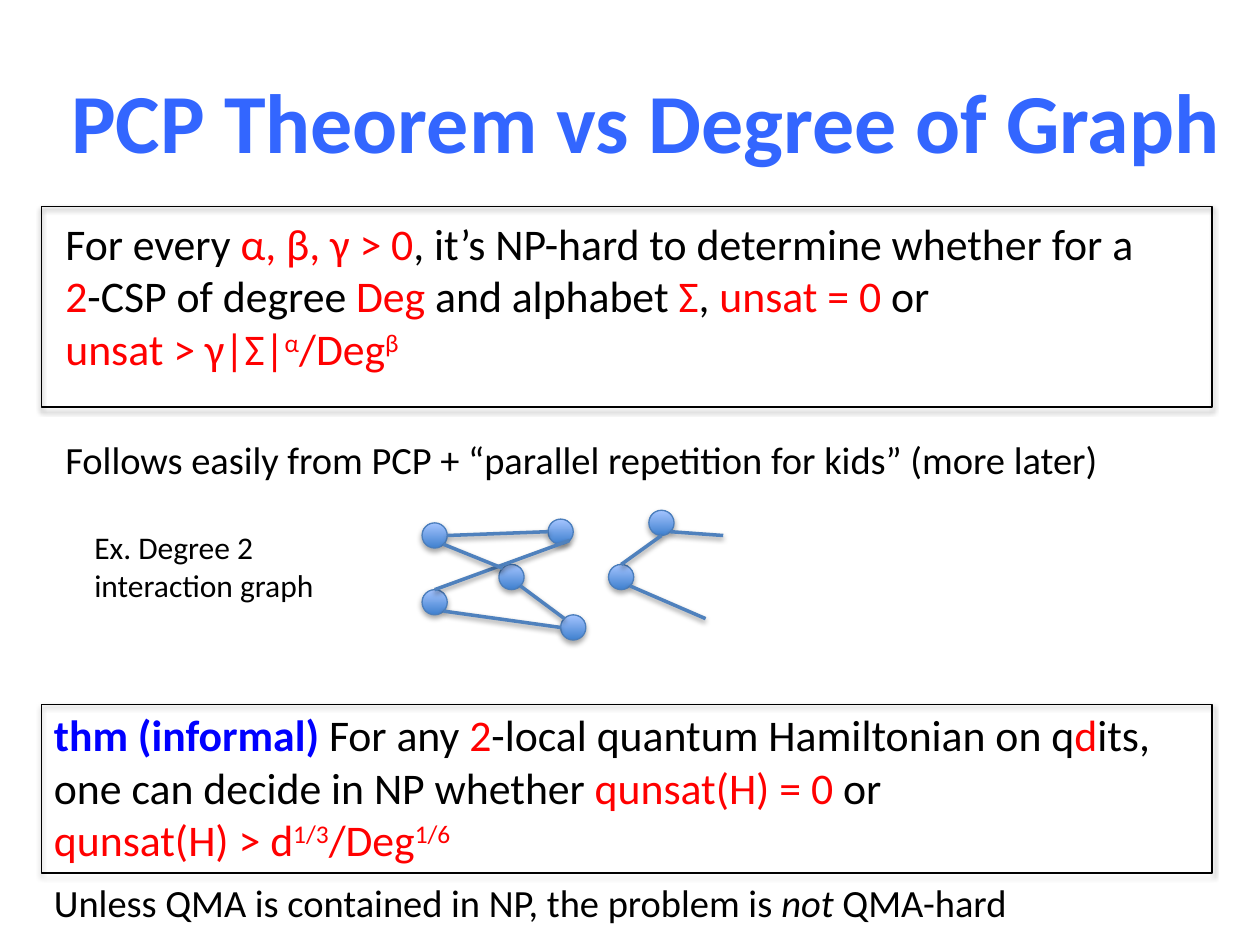
from typing import NamedTuple

from lxml import etree
from pptx import Presentation, util as u
from pptx.dml.color import RGBColor
from pptx.enum import shapes, text
from pptx.oxml.ns import qn

BLACK = RGBColor(0, 0, 0)
RED = RGBColor(0xFF, 0, 0)
BLUE = RGBColor(0, 0, 0xFF)
TITLE = RGBColor(0x33, 0x66, 0xFF)
EDGE = RGBColor(0x4F, 0x81, 0xBD)
RIM = RGBColor(0x4B, 0x7E, 0xBC)
DARK = RGBColor(0x3F, 0x80, 0xCE)
LIGHT = RGBColor(0xA4, 0xC4, 0xFF)

# The slide is a grid of 100 columns by 75 rows
WIDE, HIGH = u.Inches(10), u.Inches(7.5)
COLS, ROWS = 100, 75
NODE = 2  # node diameter in grid units


class Run(NamedTuple):
    text: str
    color: RGBColor = BLACK
    bold: bool = False
    slant: bool = False
    sup: bool = False


class Note(NamedTuple):
    area: tuple[float, float, float, float]
    size: float
    paras: list[list[Run]]


class Edge(NamedTuple):
    start: tuple[float, float]
    end: tuple[float, float]


def red(words: str, sup: bool = False) -> Run:
    return Run(words, RED, sup=sup)


HEAD = Note((1.7, 0, 99.1, 19.1), 48,
            [[Run("PCP Theorem vs Degree of Graph", TITLE, bold=True)]])

NOTES = [
    Note((4.2, 16.7, 92.9, 13.6), 25, [
        [Run("For every "), red("α, β, γ > 0"),
         Run(", it’s NP-hard to determine whether for a")],
        [red("2"), Run("-CSP of degree "), red("Deg"), Run(" and alphabet "),
         red("Σ"), Run(", "), red("unsat = 0 "), Run("or")],
        [red("unsat > γ|Σ|"), red("α", True), red("/Deg"), red("β", True)],
    ]),
    Note((4.2, 34.1, 98.5, 4.7), 22, [[Run(
        "Follows easily from PCP + “parallel repetition for kids” (more later)")]]),
    Note((6.5, 41.4, 24.7, 7.1), 18, [[Run("Ex. Degree 2 interaction graph")]]),
    Note((3.3, 55.7, 92.9, 13.6), 25, [
        [Run("thm (informal)", BLUE, bold=True), Run(" For any "), red("2"),
         Run("-local quantum Hamiltonian on q"), red("d"),
         Run("its, one can decide in NP whether "),
         red("qunsat(H) = 0 "), Run("or")],
        [red("qunsat(H) > d"), red("1/3", True), red("/Deg"), red("1/6", True)],
    ]),
    Note((3.3, 69.3, 108, 4.7), 22, [
        [Run("Unless QMA is contained in NP, the problem is "),
         Run("not", slant=True), Run(" QMA-hard")],
    ]),
]

FRAMES = [(3.3, 16.4, 92.9, 15.9), (3.3, 55.9, 92.9, 13.4)]

# Node centres
NODES = [(34.5, 42.5), (44.5, 42.2), (40.6, 45.8), (49.3, 45.8),
         (34.5, 47.8), (45.5, 49.8), (52.5, 41.5)]

EDGES = [
    Edge((35.2, 48.5), (44.5, 49.8)), Edge((41.3, 46.5), (44.8, 49.1)),
    Edge((45.2, 42.9), (34.5, 46.8)), Edge((35.2, 43.2), (39.9, 45.1)),
    Edge((35.5, 42.5), (43.5, 42.2)), Edge((49.3, 44.8), (52.5, 42.5)),
    Edge((50, 46.5), (56, 49.1)), Edge((53.2, 42.2), (57.4, 42.5)),
]


def grid(*vals: float) -> list[int]:
    """Turn alternating columns and rows into lengths."""
    units = (WIDE / COLS, HIGH / ROWS)
    return [round(v * units[i % 2]) for i, v in enumerate(vals)]


def shade(item, alpha: int, dist: float) -> None:
    """Give a shape or connector a soft shadow straight below it."""
    fx = etree.SubElement(item._element.spPr, qn("a:effectLst"))
    drop = etree.SubElement(fx, qn("a:outerShdw"), blurRad=str(u.Pt(3.1)),
                            dist=str(u.Pt(dist)), dir="5400000", rotWithShape="0")
    tint = etree.SubElement(drop, qn("a:srgbClr"), val=str(BLACK))
    etree.SubElement(tint, qn("a:alpha"), val=str(alpha * 1000))


def write(slide, note: Note):
    frame = slide.shapes.add_textbox(*grid(*note.area)).text_frame
    frame.word_wrap = True
    for i, runs in enumerate(note.paras):
        para = frame.add_paragraph() if i else frame.paragraphs[0]
        for part in runs:
            run = para.add_run()
            run.text = part.text
            font = run.font
            font.name, font.size = "Calibri", u.Pt(note.size)
            font.bold, font.italic = part.bold, part.slant
            font.color.rgb = part.color
            if part.sup:
                run._r.get_or_add_rPr().set("baseline", "30000")
    return frame


def box(slide, area: tuple[float, float, float, float]) -> None:
    rect = slide.shapes.add_shape(shapes.MSO_SHAPE.RECTANGLE, *grid(*area))
    rect.fill.background()
    rect.line.color.rgb, rect.line.width = BLACK, u.Pt(0.75)
    shade(rect, 35, 1.8)


def dot(slide, x: float, y: float) -> None:
    ball = slide.shapes.add_shape(
        shapes.MSO_SHAPE.OVAL, *grid(x - NODE / 2, y - NODE / 2, NODE, NODE))
    ball.fill.gradient()
    ball.fill.gradient_angle = 90
    for stop, color, pos in zip(ball.fill.gradient_stops, (DARK, LIGHT), (0, 1)):
        stop.color.rgb, stop.position = color, pos
    ball.line.color.rgb, ball.line.width = RIM, u.Pt(0.75)
    shade(ball, 35, 1.8)


def link(slide, edge: Edge) -> None:
    line = slide.shapes.add_connector(
        shapes.MSO_CONNECTOR.STRAIGHT, *grid(*edge.start, *edge.end))
    line.line.color.rgb, line.line.width = EDGE, u.Pt(2)
    shade(line, 38, 1.6)


def main() -> None:
    deck = Presentation()
    deck.slide_width, deck.slide_height = WIDE, HIGH
    slide = deck.slides.add_slide(deck.slide_layouts[6])

    # Title
    head = write(slide, HEAD)
    head.vertical_anchor = text.MSO_ANCHOR.MIDDLE
    head.paragraphs[0].alignment = text.PP_ALIGN.CENTER

    # Statements and their frames
    for note in NOTES:
        write(slide, note).auto_size = text.MSO_AUTO_SIZE.SHAPE_TO_FIT_TEXT
    for area in FRAMES:
        box(slide, area)

    # Interaction graph
    for x, y in NODES:
        dot(slide, x, y)
    for edge in EDGES:
        link(slide, edge)

    deck.save("out.pptx")


if __name__ == "__main__":
    main()
